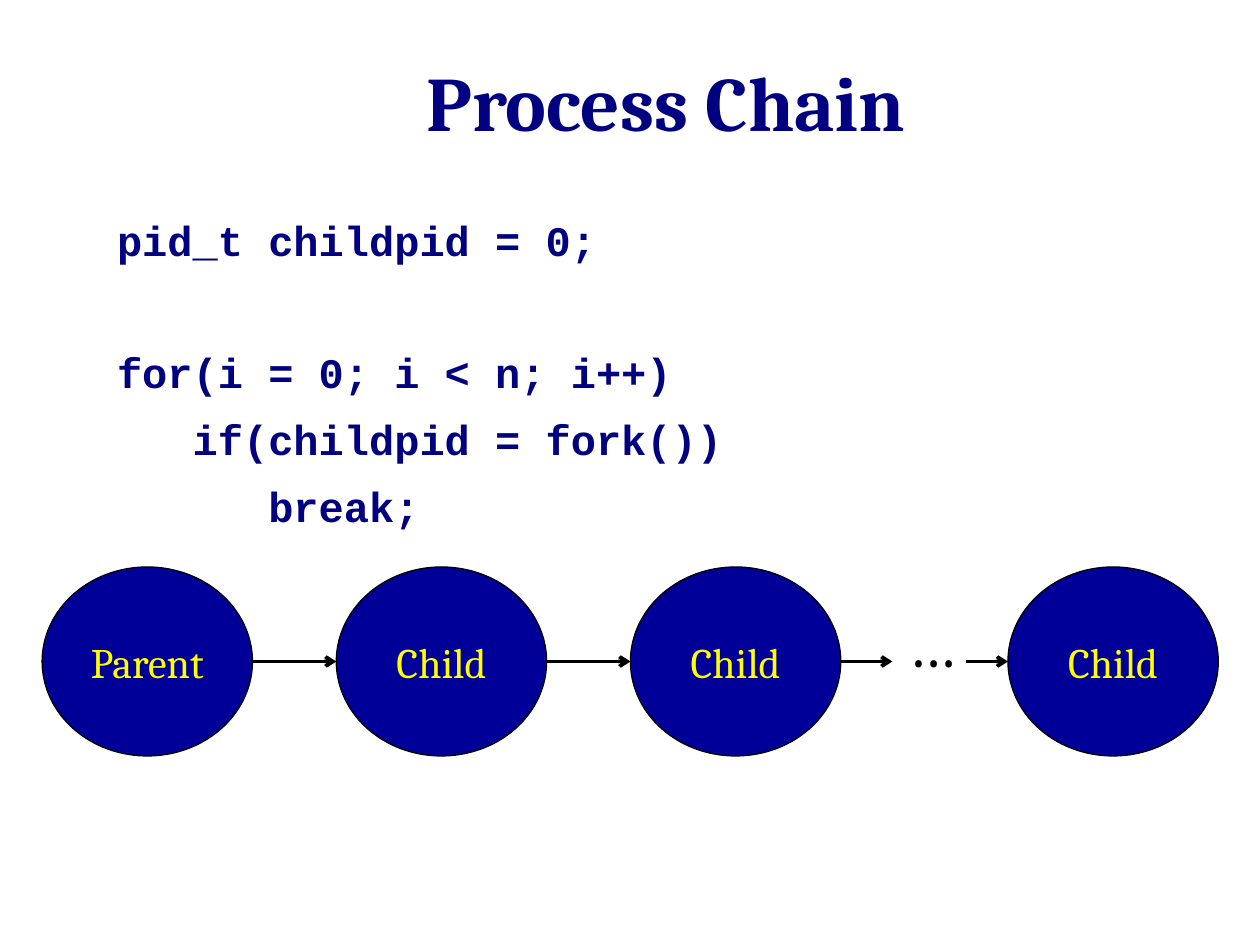
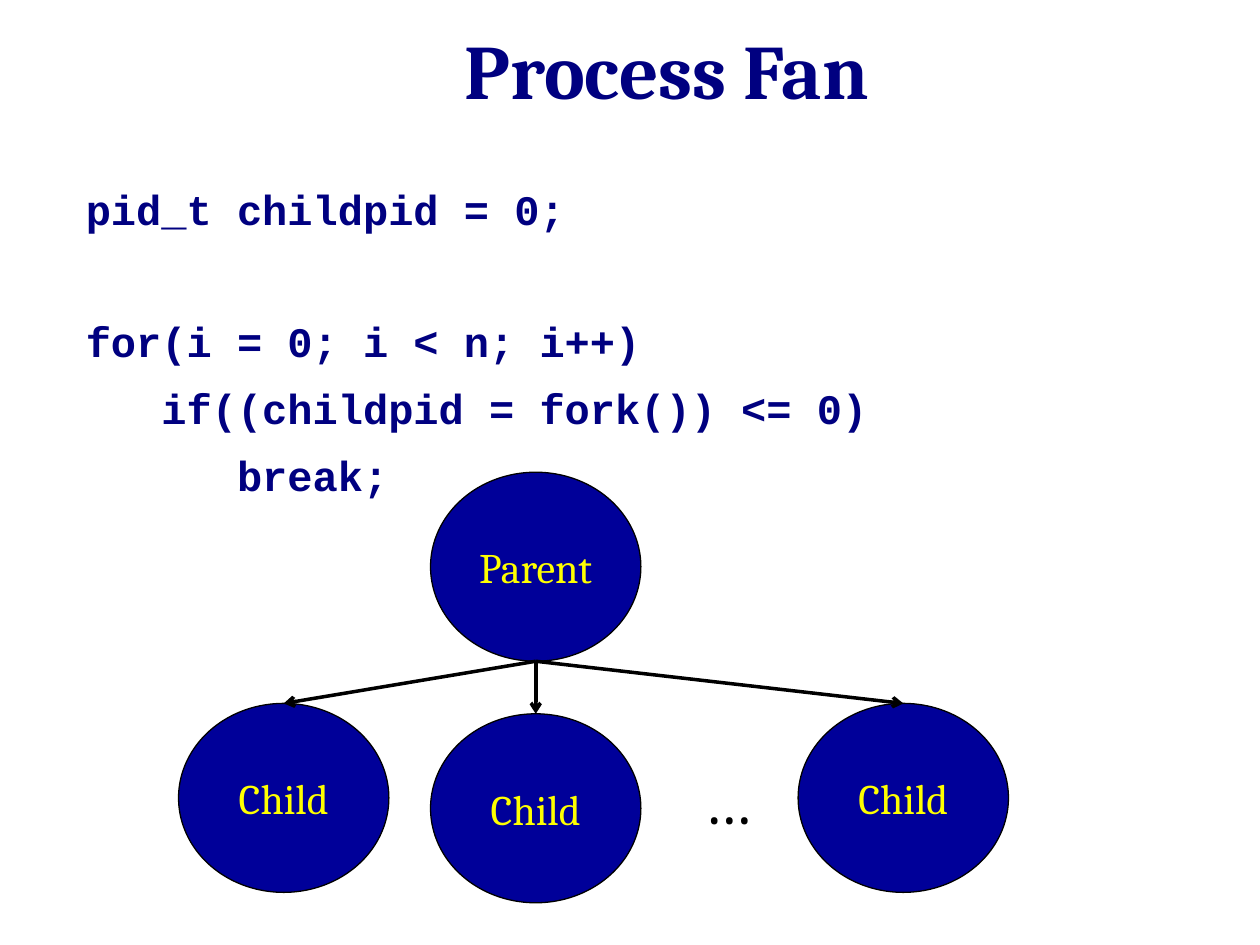
from lxml import etree
from pptx import Presentation
from pptx.dml.color import RGBColor
from pptx.enum import shapes, text
from pptx.oxml import ns
from pptx.util import Cm, Pt

TITLE_ONLY = 5
NAVY, NODE_BLUE, YELLOW, BLACK = "000080", "000099", "FFFF00", "000000"
TITLE_FORMAT = {"name": "Cambria", "size": Pt(44), "bold": True}
CODE_FORMAT = {"name": "Courier New", "size": Pt(24), "bold": True}
NODE_FORMAT = {"name": "Cambria", "size": Pt(24)}
DOTS_FORMAT = {"name": "Cambria", "size": Pt(36)}
NODE_WIDTH, NODE_HEIGHT = 4.24, 3.81
DOTS_SIZE = 1.8
LINE_GAP, BLOCK_GAP = Pt(9.6), Pt(46.5)


def color(hex_value):
    return RGBColor.from_string(hex_value)


def format_font(font, values, hex_value):
    for name, value in values.items():
        setattr(font, name, value)
    font.color.rgb = color(hex_value)


def place(shape, box):
    for name, value in zip(("left", "top", "width", "height"), box):
        setattr(shape, name, Cm(value))


def add_titled_slide(presentation, title, box):
    slide = presentation.slides.add_slide(presentation.slide_layouts[TITLE_ONLY])
    place(slide.shapes.title, box)
    frame = slide.shapes.title.text_frame
    frame.text = title
    frame.vertical_anchor = text.MSO_ANCHOR.MIDDLE
    frame.paragraphs[0].alignment = text.PP_ALIGN.CENTER
    format_font(frame.paragraphs[0].font, TITLE_FORMAT, NAVY)
    return slide


def add_code(slide, blocks, box):
    """Write blocks of code lines, with a wider gap between blocks."""
    frame = slide.shapes.add_textbox(*map(Cm, box)).text_frame
    frame.word_wrap = True
    paragraph = None
    for block in blocks:
        for number, line in enumerate(block):
            if paragraph is None:
                paragraph = frame.paragraphs[0]
            else:
                paragraph = frame.add_paragraph()
                paragraph.space_before = LINE_GAP if number else BLOCK_GAP
            paragraph.text = line
            format_font(paragraph.font, CODE_FORMAT, NAVY)


def add_node(slide, label, left, top):
    node = slide.shapes.add_shape(shapes.MSO_SHAPE.OVAL, Cm(left), Cm(top),
                                  Cm(NODE_WIDTH), Cm(NODE_HEIGHT))
    node.shadow.inherit = False
    node.fill.solid()
    node.fill.fore_color.rgb = color(NODE_BLUE)
    node.line.color.rgb = color(BLACK)
    node.line.width = Pt(0.75)
    frame = node.text_frame
    frame.text = label
    frame.vertical_anchor = text.MSO_ANCHOR.MIDDLE
    frame.paragraphs[0].alignment = text.PP_ALIGN.CENTER
    format_font(frame.paragraphs[0].font, NODE_FORMAT, YELLOW)


def add_arrow(slide, start, end):
    arrow = slide.shapes.add_connector(shapes.MSO_CONNECTOR.STRAIGHT,
                                       *map(Cm, (*start, *end)))
    arrow.line.color.rgb = color(BLACK)
    arrow.line.width = Pt(2)
    line = arrow._element.spPr.find(ns.qn("a:ln"))
    etree.SubElement(line, ns.qn("a:tailEnd"), type="arrow")
    etree.SubElement(arrow._element.spPr, ns.qn("a:effectLst"))


def add_dots(slide, left, top):
    dots = slide.shapes.add_textbox(Cm(left), Cm(top), Cm(DOTS_SIZE), Cm(DOTS_SIZE))
    dots.text_frame.word_wrap = False
    paragraph = dots.text_frame.paragraphs[0]
    paragraph.text = "…"
    paragraph.alignment = text.PP_ALIGN.CENTER
    format_font(paragraph.font, DOTS_FORMAT, BLACK)


def add_chain(slide, left, top):
    """Draw a row of linked processes with a gap before the last one."""
    middle = top + NODE_HEIGHT / 2
    parent, first, second, last = [left + offset for offset in (0, 5.93, 11.86, 19.47)]
    add_node(slide, "Parent", parent, top)
    for child in (first, second, last):
        add_node(slide, "Child", child, top)
    for start, end in ((parent + NODE_WIDTH, first), (first + NODE_WIDTH, second),
                       (second + NODE_WIDTH, left + 17.14), (left + 18.63, last)):
        add_arrow(slide, (start, middle), (end, middle))
    add_dots(slide, left + 17.03, top + 0.63)


def add_fan(slide, left, top):
    """Draw one parent process above its children."""
    center = left + NODE_WIDTH / 2
    parent_offset = 5.08
    add_node(slide, "Parent", left + parent_offset, top)
    for across, down in ((0, 4.66), (parent_offset, 4.87), (12.49, 4.66)):
        add_node(slide, "Child", left + across, top + down)
        add_arrow(slide, (center + parent_offset, top + NODE_HEIGHT),
                  (center + across, top + down))
    add_dots(slide, left + 10.16, top + 5.71)


def code_blocks(condition):
    return (("pid_t childpid = 0;",),
            ("for(i = 0; i < n; i++)", f"   if({condition})", "      break;"))


def main():
    presentation = Presentation()
    presentation.slide_width, presentation.slide_height = Cm(25.4), Cm(19.05)

    chain = add_titled_slide(presentation, "Process Chain", (2.11, 0.03, 22.63, 3.99))
    add_code(chain, code_blocks("childpid = fork()"), (2.11, 4.2, 22.86, 11.84))
    add_chain(chain, 0.85, 11.43)

    fan = add_titled_slide(presentation, "Process Fan", (2.11, 0, 22.66, 2.75))
    add_code(fan, code_blocks("(childpid = fork()) <= 0"), (1.48, 3.57, 22.86, 11.86))
    add_fan(fan, 3.6, 9.52)

    presentation.save("out.pptx")


if __name__ == "__main__":
    main()
